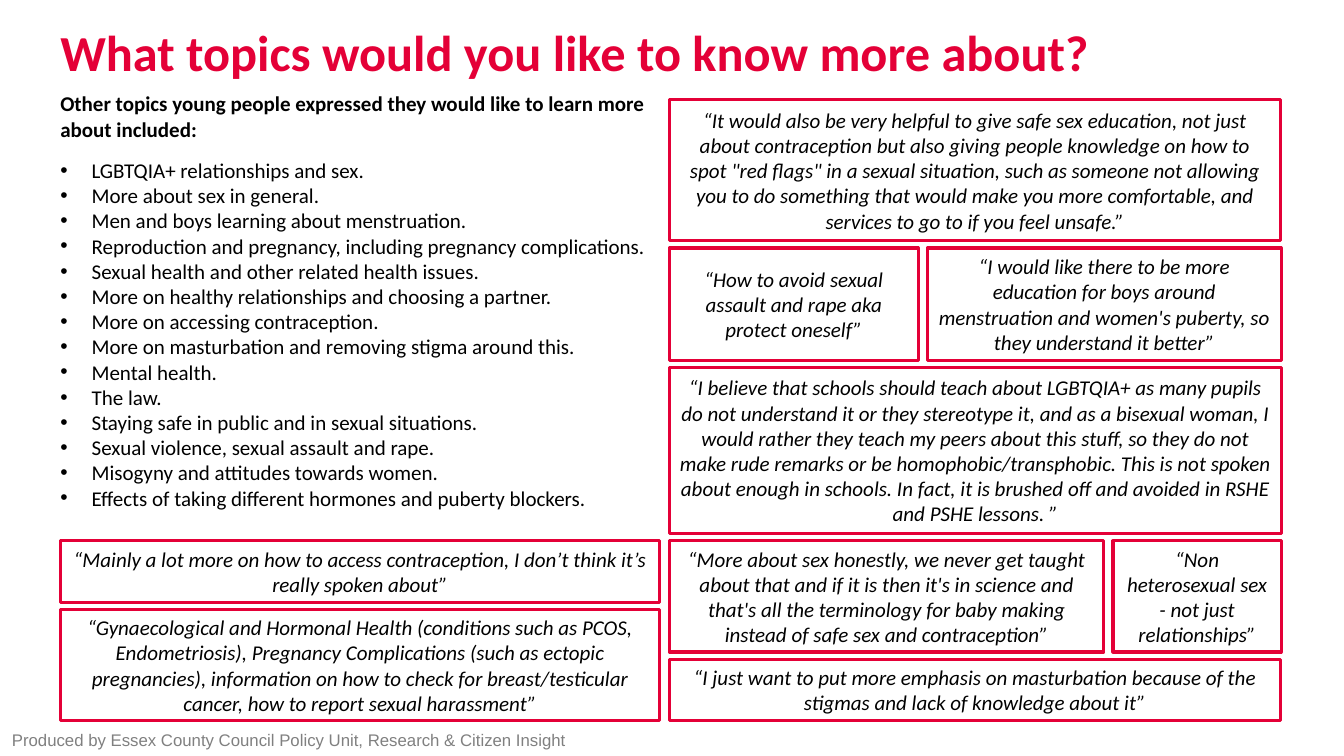
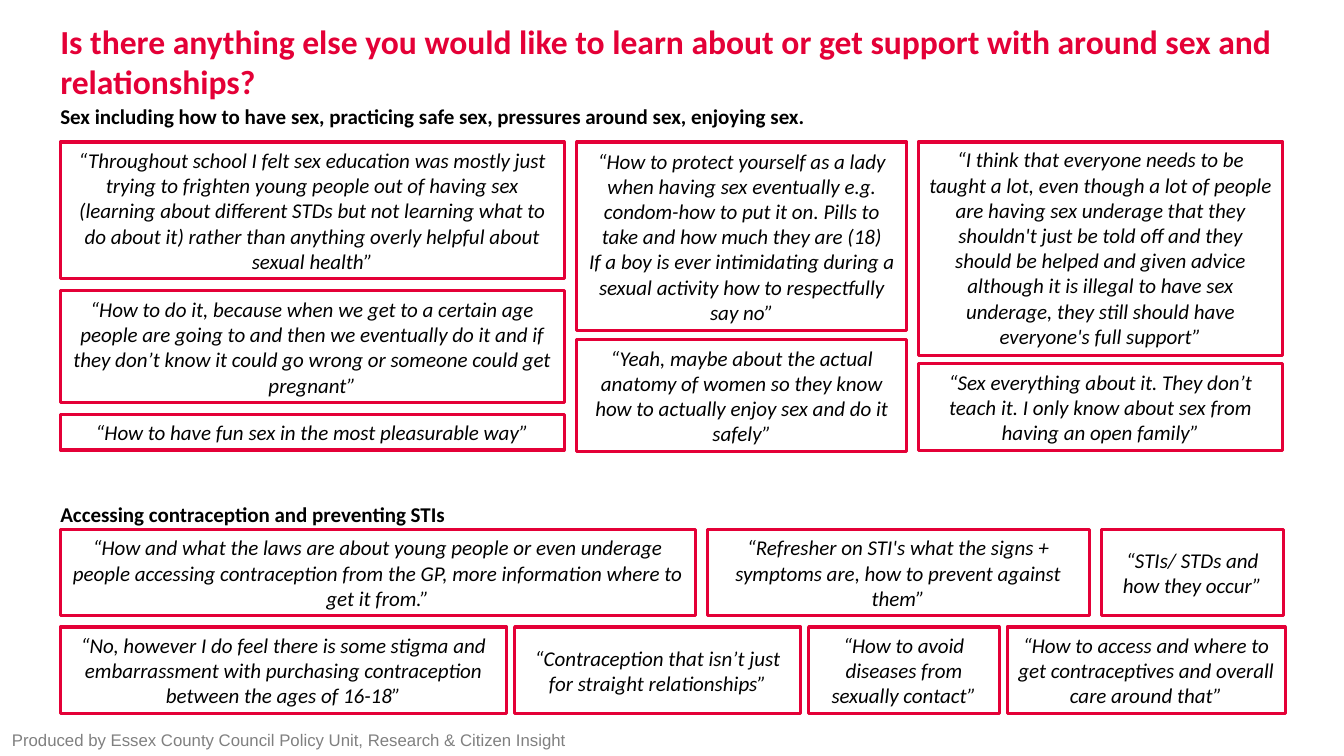
from dataclasses import dataclass

import pptx
import pptx.dml.color
import pptx.enum.shapes
import pptx.enum.text
import pptx.oxml.ns
import pptx.util
from lxml import etree
from pptx.util import Cm, Pt

RED = pptx.dml.color.RGBColor(0xE4, 0x00, 0x37)
BLACK = pptx.dml.color.RGBColor(0x00, 0x00, 0x00)
GREY = pptx.dml.color.RGBColor(0x80, 0x80, 0x80)

Align = pptx.enum.text.PP_ALIGN
Anchor = pptx.enum.text.MSO_ANCHOR

BODY_FONT = "Calibri"
FOOTER_FONT = "Arial"
BODY_SIZE = 15
LEFT = 1.52
COLUMN_WIDTH = 15.42
BULLET_INDENT = Cm(0.79)
FOOTER = "Produced by Essex County Council Policy Unit, Research & Citizen Insight"


@dataclass(frozen=True)
class Quote:
    width: float
    text: str
    anchor: Anchor = Anchor.MIDDLE


@dataclass(frozen=True)
class Row:
    height: float
    quotes: tuple[Quote, ...]
    gap: float = 0.23


@dataclass(frozen=True)
class Block:
    """Rows of quotes stacked downwards; lengths in centimetres."""

    left: float
    top: float
    gap: float
    rows: tuple[Row, ...]


TOPICS = (
    "LGBTQIA+ relationships and sex.",
    "More about sex in general.",
    "Men and boys learning about menstruation.",
    "Reproduction and pregnancy, including pregnancy complications.",
    "Sexual health and other related health issues.",
    "More on healthy relationships and choosing a partner.",
    "More on accessing contraception.",
    "More on masturbation and removing stigma around this.",
    "Mental health.",
    "The law.",
    "Staying safe in public and in sexual situations.",
    "Sexual violence, sexual assault and rape.",
    "Misogyny and attitudes towards women.",
    "Effects of taking different hormones and puberty blockers.",
)

TOPIC_QUOTES = (
    Block(LEFT, 13.63, 0.18, (
        Row(1.55, (Quote(15.11, "“Mainly a lot more on how to access contraception, I don’t think "
                                "it’s really spoken about”"),)),
        Row(2.8, (Quote(15.11, "“Gynaecological and Hormonal Health (conditions such as PCOS, "
                               "Endometriosis), Pregnancy Complications (such as ectopic "
                               "pregnancies), information on how to check for breast/testicular "
                               "cancer, how to report sexual harassment”"),)),
    )),
    Block(16.87, 2.51, 0.18, (
        Row(3.56, (Quote(15.4, "“It would also be very helpful to give safe sex education, not "
                               "just about contraception but also giving people knowledge on how "
                               "to spot \"red flags\" in a sexual situation, such as someone not "
                               "allowing you to do something that would make you more "
                               "comfortable, and services to go to if you feel unsafe.”"),)),
        Row(2.83, (
            Quote(6.27, "“How to avoid sexual assault and rape aka protect oneself”"),
            Quote(8.92, "“I would like there to be more education for boys around menstruation "
                        "and women's puberty, so they understand it better”"),
        )),
        Row(4.19, (Quote(15.42, "“I believe that schools should teach about LGBTQIA+ as many "
                                "pupils do not understand it or they stereotype it, and as a "
                                "bisexual woman, I would rather they teach my peers about this "
                                "stuff, so they do not make rude remarks or be "
                                "homophobic/transphobic. This is not spoken about enough in "
                                "schools. In fact, it is brushed off and avoided in RSHE and "
                                "PSHE lessons. ”"),)),
        Row(2.8, (
            Quote(10.95, "“More about sex honestly, we never get taught about that and if it is "
                         "then it's in science and that's all the terminology for baby making "
                         "instead of safe sex and contraception”"),
            Quote(4.24, "“Non heterosexual sex - not just relationships”"),
        )),
        Row(1.55, (Quote(15.4, "“I just want to put more emphasis on masturbation because of the "
                               "stigmas and lack of knowledge about it”"),)),
    )),
)

SUPPORT_QUOTES = (
    Block(LEFT, 3.58, 0.3, (
        Row(3.45, (Quote(12.7, "“Throughout school I felt sex education was mostly just trying "
                               "to frighten young people out of having sex (learning about "
                               "different STDs but not learning what to do about it) rather than "
                               "anything overly helpful about sexual health”"),)),
        Row(2.82, (Quote(12.7, "“How to do it, because when we get to a certain age people are "
                               "going to and then we eventually do it and if they don’t know it "
                               "could go wrong or someone could get pregnant”"),)),
        Row(0.89, (Quote(12.7, "“How to have fun sex in the most pleasurable way”"),)),
    )),
    Block(14.54, 3.58, 0.23, (
        Row(4.75, (Quote(8.31, "“How to protect yourself as a lady when having sex eventually "
                               "e.g. condom-how to put it on. Pills to take and how much they "
                               "are (18)\nIf a boy is ever intimidating during a sexual activity "
                               "how to respectfully say no”"),)),
        Row(2.82, (Quote(8.31, "“Yeah, maybe about the actual anatomy of women so they know how "
                               "to actually enjoy sex and do it safely”"),)),
    )),
    Block(23.14, 3.58, 0.21, (
        Row(5.38, (Quote(9.19, "“I think that everyone needs to be taught a lot, even though a "
                               "lot of people are having sex underage that they shouldn't just "
                               "be told off and they should be helped and given advice although "
                               "it is illegal to have sex underage, they still should have "
                               "everyone's full support”", Anchor.TOP),)),
        Row(2.18, (Quote(9.19, "“Sex everything about it. They don’t teach it. I only know about "
                               "sex from having an open family”"),)),
    )),
    Block(LEFT, 13.34, 0.28, (
        Row(2.18, (
            Quote(16, "“How and what the laws are about young people or even underage people "
                      "accessing contraception from the GP, more information where to get it "
                      "from.”"),
            Quote(9.63, "“Refresher on STI's what the signs + symptoms are, how to prevent "
                        "against them”"),
            Quote(4.6, "“STIs/ STDs and how they occur”"),
        ), gap=0.3),
        Row(2.18, (
            Quote(11.25, "“No, however I do feel there is some stigma and embarrassment with "
                         "purchasing contraception between the ages of 16-18”"),
            Quote(7.21, "“Contraception that isn’t just for straight relationships”"),
            Quote(4.8, "“How to avoid diseases from sexually contact”"),
            Quote(7.01, "“How to access and where to get contraceptives and overall care around "
                        "that”"),
        ), gap=0.2),
    )),
)


def write_text(shape, text: str, *, size: float = BODY_SIZE, color=BLACK, font: str = BODY_FONT,
               bold: bool = False, italic: bool = False, align=Align.LEFT, anchor=Anchor.TOP,
               bullets: bool = False) -> None:
    """Fill a shape with one paragraph for each line of text."""
    frame = shape.text_frame
    frame.word_wrap = True
    frame.vertical_anchor = anchor
    frame.text = text
    for paragraph in frame.paragraphs:
        paragraph.alignment = align
        paragraph.font.size = Pt(size)
        for run in paragraph.runs:
            run.font.name = font
            run.font.size = Pt(size)
            run.font.bold = bold
            run.font.italic = italic
            run.font.color.rgb = color
        if bullets:
            add_bullet(paragraph)


def add_bullet(paragraph) -> None:
    properties = paragraph._p.get_or_add_pPr()
    properties.set("marL", str(BULLET_INDENT))
    properties.set("indent", str(-BULLET_INDENT))
    font = etree.SubElement(properties, pptx.oxml.ns.qn("a:buFont"))
    font.set("typeface", "Arial")
    character = etree.SubElement(properties, pptx.oxml.ns.qn("a:buChar"))
    character.set("char", "•")


def add_label(slide, left: float, top: float, width: float, height: float, text: str,
              **text_format) -> None:
    """Add a text box without insets."""
    box = slide.shapes.add_textbox(Cm(left), Cm(top), Cm(width), Cm(height))
    frame = box.text_frame
    frame.margin_left = frame.margin_right = frame.margin_top = frame.margin_bottom = 0
    write_text(box, text, **text_format)


def add_quote(slide, left: float, top: float, height: float, quote: Quote) -> None:
    shape = slide.shapes.add_shape(pptx.enum.shapes.MSO_SHAPE.RECTANGLE,
                                   Cm(left), Cm(top), Cm(quote.width), Cm(height))
    shape.shadow.inherit = False
    shape.fill.background()
    shape.line.color.rgb = RED
    shape.line.width = Pt(2.25)
    write_text(shape, quote.text, italic=True, align=Align.CENTER, anchor=quote.anchor)


def add_block(slide, block: Block) -> None:
    top = block.top
    for row in block.rows:
        left = block.left
        for quote in row.quotes:
            add_quote(slide, left, top, row.height, quote)
            left += quote.width + row.gap
        top += row.height + block.gap


def add_slide(presentation, title: str, title_size: float, blocks: tuple[Block, ...]):
    """Add a slide with its title, quotes and footer."""
    slide = presentation.slides.add_slide(presentation.slide_layouts[6])
    add_label(slide, LEFT, 0.53, 31.32, 1.32, title, size=title_size, color=RED, bold=True)
    for block in blocks:
        add_block(slide, block)
    add_label(slide, 0.3, 18.39, 16, 0.38, FOOTER, size=12, color=GREY, font=FOOTER_FONT)
    return slide


def main() -> None:
    presentation = pptx.Presentation()
    presentation.slide_width = Cm(33.87)
    presentation.slide_height = Cm(19.05)

    topics = add_slide(presentation, "What topics would you like to know more about?", 36,
                       TOPIC_QUOTES)
    add_label(topics, LEFT, 2.29, COLUMN_WIDTH, 1.3,
              "Other topics young people expressed they would like to learn more about included:",
              bold=True)
    add_label(topics, LEFT, 3.97, COLUMN_WIDTH, 9, "\n".join(TOPICS), bullets=True)

    support = add_slide(presentation, "Is there anything else you would like to learn about or "
                        "get support with around sex and relationships?", 24, SUPPORT_QUOTES)
    for top, heading in (
        (2.6, "Sex including how to have sex, practicing safe sex, pressures around sex, "
              "enjoying sex."),
        (12.65, "Accessing contraception and preventing STIs"),
    ):
        add_label(support, LEFT, top, 30.84, 0.65, heading, bold=True)

    presentation.save("out.pptx")


if __name__ == "__main__":
    main()
